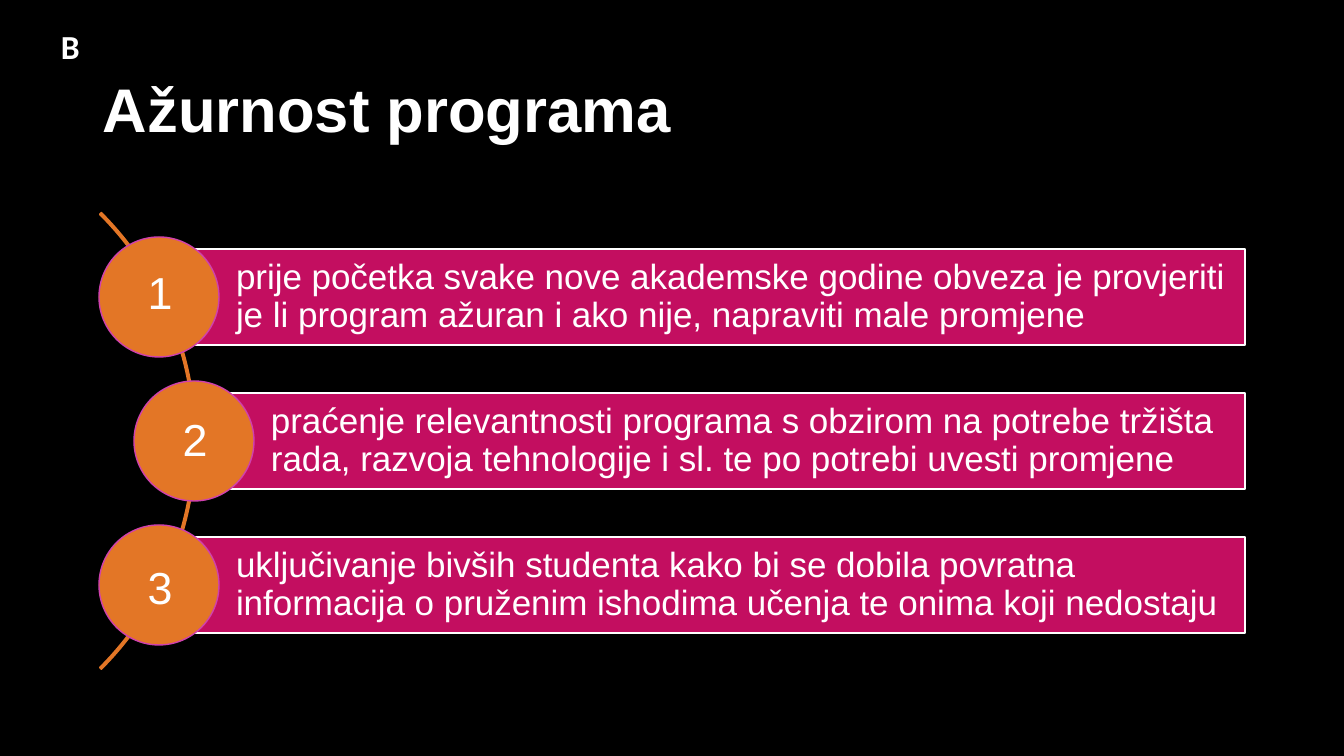
import pptx
import pptx.util
import pptx.dml.color
import pptx.enum.shapes
import pptx.enum.text

EMU_PER_PX = 914400 / 100.8
THEME = {
    "background": "000000", "text": "FFFFFF", "bar": "C30E60",
    "circle": "E37626", "circle_line": "CF41AD",
    "font": "Arial", "marker_font": "Calibri",
    "title_size": 44, "number_size": 32, "body_size": 25, "marker_size": 24,
}
SHAPE = pptx.enum.shapes.MSO_SHAPE
ALIGN = pptx.enum.text.PP_ALIGN
ANCHOR = pptx.enum.text.MSO_ANCHOR
color = pptx.dml.color.RGBColor.from_string


def px(*lengths):
    return [pptx.util.Emu(round(length * EMU_PER_PX)) for length in lengths]


def write(box, text, size, font=THEME["font"], bold=False, align=ALIGN.LEFT,
          anchor=ANCHOR.TOP, spacing=1.0, wrap=True, margins=(10, 5, 10, 5)):
    frame = box.text_frame
    frame.word_wrap = wrap
    frame.vertical_anchor = anchor
    (frame.margin_left, frame.margin_top,
     frame.margin_right, frame.margin_bottom) = px(*margins)
    para = frame.paragraphs[0]
    para.alignment = align
    para.line_spacing = spacing
    span = para.add_run()
    span.text = text
    span.font.name = font
    span.font.size = pptx.util.Pt(size)
    span.font.bold = bold
    span.font.color.rgb = color(THEME["text"])


deck = pptx.Presentation()
deck.slide_width, deck.slide_height = px(1344, 756)
page = deck.slides.add_slide(deck.slide_layouts[6])
page.background.fill.solid()
page.background.fill.fore_color.rgb = color(THEME["background"])

# Title
title = page.shapes.add_textbox(*px(93, 40, 1159, 146))
write(title, "Ažurnost programa", THEME["title_size"], bold=True,
      anchor=ANCHOR.MIDDLE, spacing=0.9)

# Shapes, back to front: the arc, then a bar and a circle for each step
ROW_PITCH = 144
BAR_TOP, BAR_HEIGHT, BAR_RIGHT = 249, 96, 1245
CIRCLE_SIZE = 120
steps = [
    (159, 260, "prije početka svake nove akademske godine obveza je provjeriti "
               "je li program ažuran i ako nije, napraviti male promjene"),
    (194, 407, "praćenje relevantnosti programa s obzirom na potrebe tržišta "
               "rada, razvoja tehnologije i sl. te po potrebi uvesti promjene"),
    (159, 555, "uključivanje bivših studenta kako bi se dobila povratna "
               "informacija o pruženim ishodima učenja te onima koji nedostaju"),
]
outlines = [(SHAPE.BLOCK_ARC, (-450, 118, 646, 646),
             THEME["circle"], THEME["circle"], None)]
for row, (left, number_top, text) in enumerate(steps):
    top = BAR_TOP + row * ROW_PITCH
    outlines.append((SHAPE.RECTANGLE, (left, top, BAR_RIGHT - left, BAR_HEIGHT),
                     THEME["bar"], THEME["text"], text))
    outlines.append((SHAPE.OVAL, (left - CIRCLE_SIZE // 2,
                                  top + (BAR_HEIGHT - CIRCLE_SIZE) // 2,
                                  CIRCLE_SIZE, CIRCLE_SIZE),
                     THEME["circle"], THEME["circle_line"], None))

for kind, place, fill, line, text in outlines:
    shape = page.shapes.add_shape(kind, *px(*place))
    shape.shadow.inherit = False
    shape.fill.solid()
    shape.fill.fore_color.rgb = color(fill)
    shape.line.color.rgb = color(line)
    shape.line.width = pptx.util.Pt(1)
    if kind == SHAPE.BLOCK_ARC:
        # Start angle, end angle and thickness
        for index, value in enumerate((189, 27, 0.004)):
            shape.adjustments[index] = value
    if text:
        write(shape, text, THEME["body_size"], anchor=ANCHOR.MIDDLE,
              spacing=0.9, margins=(77, 7, 7, 7))

# Step numbers
for number, (left, number_top, text) in enumerate(steps, start=1):
    label = page.shapes.add_textbox(*px(left - 41, number_top, 84, 64))
    write(label, str(number), THEME["number_size"], align=ALIGN.CENTER)

# Corner marker
marker = page.shapes.add_textbox(*px(51, 21, 39, 50))
write(marker, "B", THEME["marker_size"], font=THEME["marker_font"],
      bold=True, wrap=False)

deck.save("out.pptx")
